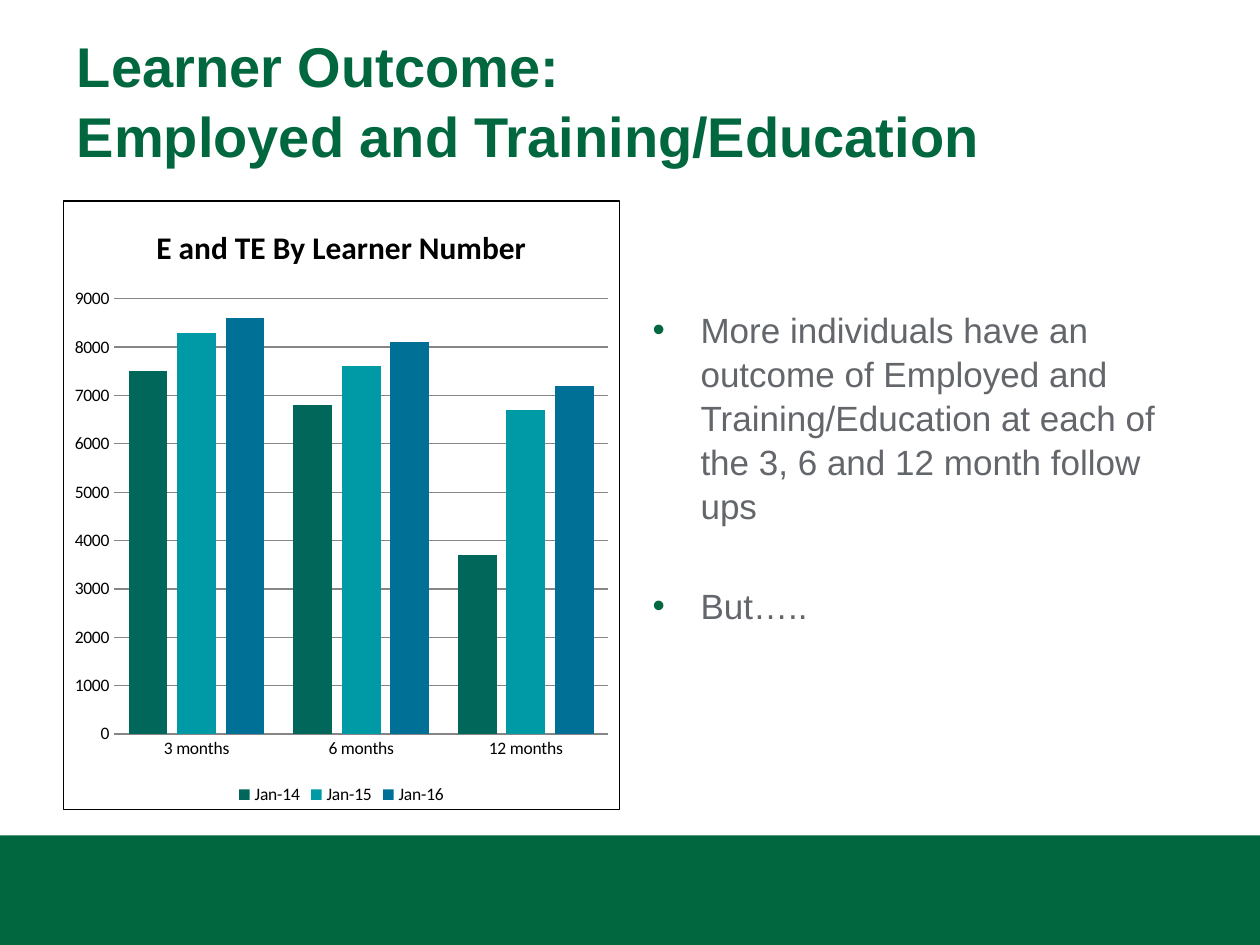
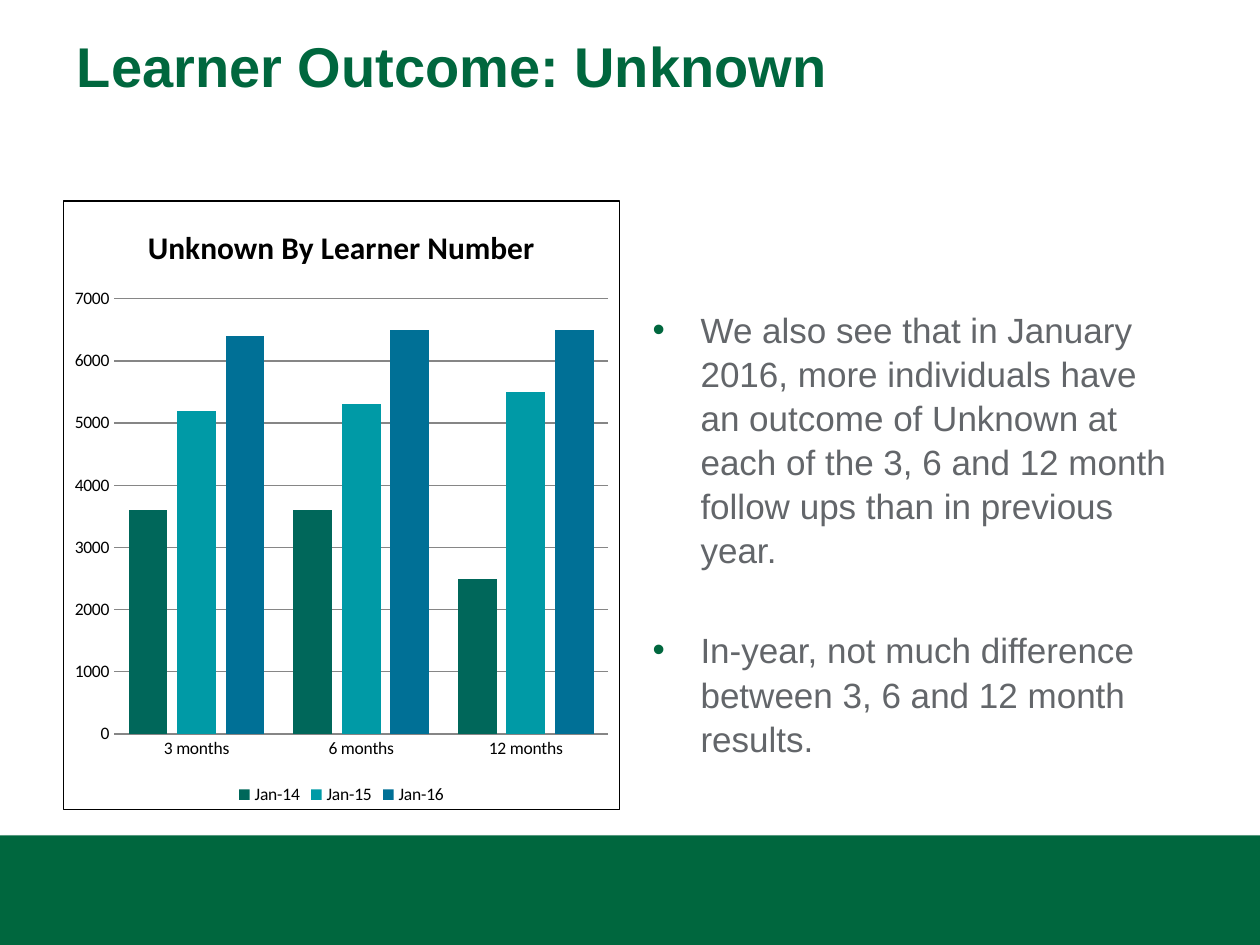
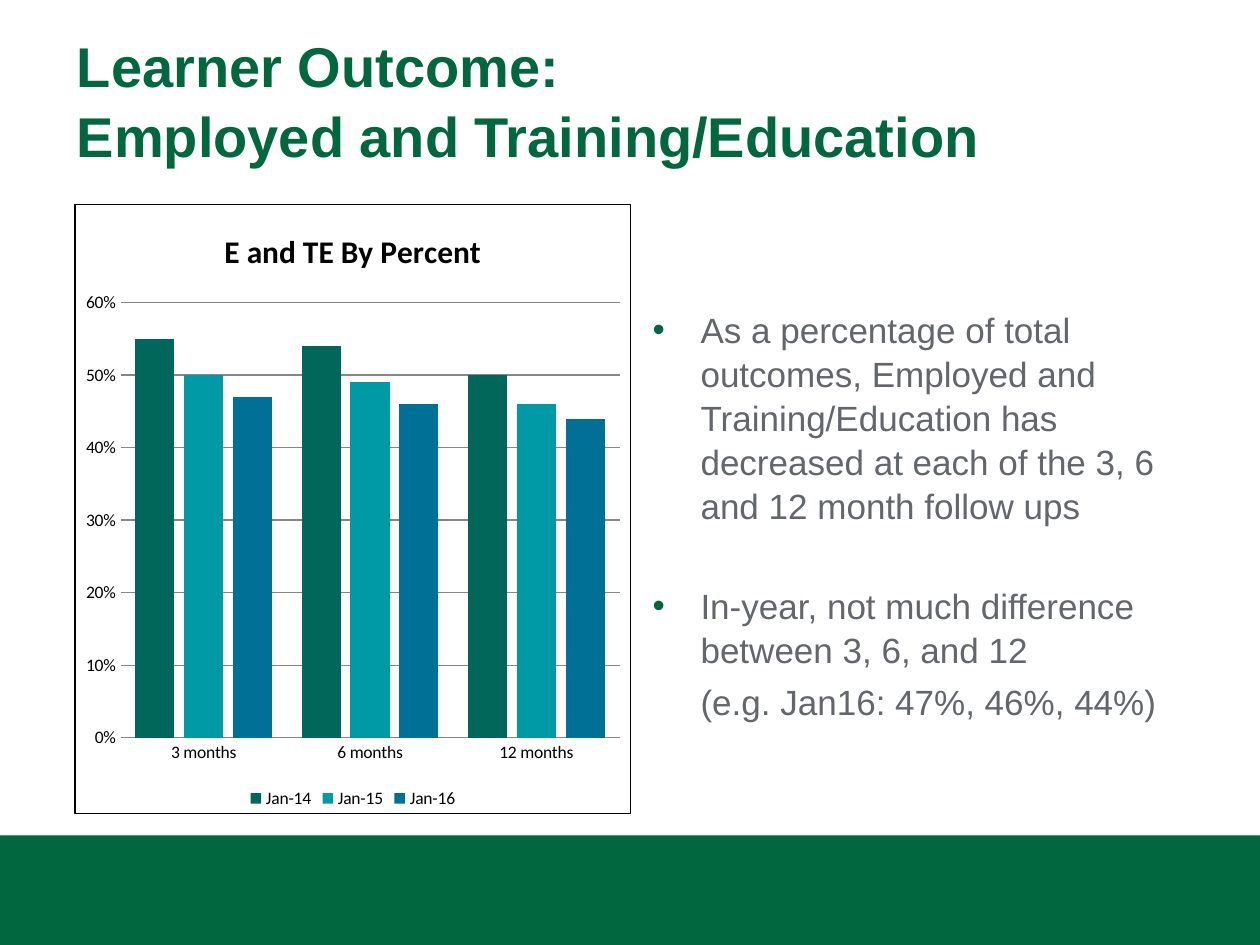
"""Build three slides on learner outcomes, each with a column chart and bullets."""
from lxml import etree
from pptx import Presentation
from pptx import util as u
from pptx.chart.data import CategoryChartData
from pptx.dml.color import RGBColor
from pptx.enum import chart as ch, shapes, text
from pptx.oxml import parse_xml
from pptx.oxml.ns import nsdecls, qn

COLORS = {"green": "00673E", "gray": "63666A", "black": "000000", "grid": "868686",
          "Jan-14": "00675A", "Jan-15": "009AA6", "Jan-16": "007096"}
TITLE_FONT = {"name": "Arial", "size": u.Pt(32), "bold": True}
BODY_FONT = {"name": "Arial", "size": u.Pt(20)}
CHART_FONT = {"name": "Calibri", "size": u.Pt(10)}
CHART_TITLE_FONT = {"name": "Calibri", "size": u.Pt(18), "bold": True}
FRAME = {"word_wrap": True, "auto_size": text.MSO_AUTO_SIZE.NONE,
         "vertical_anchor": text.MSO_ANCHOR.TOP}
TITLE_AREA = (0.51, 0.16, 8.98, 1.31)
BODY_AREA = (5.08, 1.59, 4.42, 4.84)
BAND_AREA = (0, 6.63, 10, 0.87)
CHART_SIZE = (4.42, 4.84)
CATEGORIES = ["3 months", "6 months", "12 months"]
EMPLOYED_TITLE = "Learner Outcome: \vEmployed and Training/Education"

SLIDES = [
    {"title": EMPLOYED_TITLE, "chart_title": "E and TE By Learner Number",
     "corner": (0.5, 1.59), "format": "0", "top": 9000, "step": 1000,
     "series": {"Jan-14": (7500, 6800, 3700), "Jan-15": (8300, 7600, 6700),
                "Jan-16": (8600, 8100, 7200)},
     "bullets": ["More individuals have an outcome of Employed and Training/Education "
                 "at each of the 3, 6 and 12 month follow ups", "But….."]},
    {"title": "Learner Outcome: Unknown", "chart_title": "Unknown By Learner Number",
     "corner": (0.5, 1.59), "format": "0", "top": 7000, "step": 1000,
     "series": {"Jan-14": (3600, 3600, 2500), "Jan-15": (5200, 5300, 5500),
                "Jan-16": (6400, 6500, 6500)},
     "bullets": ["We also see that in January 2016, more individuals have an outcome of "
                 "Unknown at each of the 3, 6 and 12 month follow ups than in previous year.",
                 "In-year, not much difference between 3, 6 and 12 month results."]},
    {"title": EMPLOYED_TITLE, "chart_title": "E and TE By Percent",
     "corner": (0.59, 1.62), "format": "0%", "top": 0.6, "step": 0.1,
     "series": {"Jan-14": (0.55, 0.54, 0.5), "Jan-15": (0.5, 0.49, 0.46),
                "Jan-16": (0.47, 0.46, 0.44)},
     "bullets": ["As a percentage of total outcomes, Employed and Training/Education has "
                 "decreased at each of the 3, 6 and 12 month follow ups",
                 "In-year, not much difference between 3, 6, and 12"],
     "example": "(e.g. Jan16: 47%, 46%, 44%)"},
]


def apply(target, values):
    """Set each named attribute on the target."""
    for name, value in values.items():
        setattr(target, name, value)


def color(name):
    """Return a named colour."""
    return RGBColor.from_string(COLORS[name])


def style_font(font, values, shade):
    """Format a font and colour it."""
    apply(font, values)
    font.color.rgb = color(shade)


def place(shape, area):
    """Move a shape to an area given in inches."""
    apply(shape, dict(zip(("left", "top", "width", "height"), map(u.Inches, area))))


def add_band(layout, page):
    """Draw the footer band and hand it to the layout that all slides share."""
    band = page.shapes.add_shape(shapes.MSO_SHAPE.RECTANGLE, *map(u.Inches, BAND_AREA))
    band.fill.solid()
    band.fill.fore_color.rgb = color("green")
    band.line.fill.background()
    band.element.spPr.append(parse_xml(
        f'<a:effectLst {nsdecls("a")}><a:outerShdw blurRad="{u.Pt(3.1)}" dist="{u.Pt(1.8)}" '
        f'dir="5400000" rotWithShape="0"><a:srgbClr val="{COLORS["black"]}">'
        '<a:alpha val="35000"/></a:srgbClr></a:outerShdw></a:effectLst>'))
    band.element.nvSpPr.cNvPr.set("id", "20")
    layout.shapes.element.insert(2, band.element)


def fill_title(box, words):
    """Write the slide title."""
    frame = box.text_frame
    apply(frame, FRAME)
    frame.margin_top = u.Inches(0.06)
    frame.text = words
    para = frame.paragraphs[0]
    apply(para, {"alignment": text.PP_ALIGN.LEFT, "line_spacing": 1.05})
    for span in para.runs:
        style_font(span.font, TITLE_FONT, "green")
    for line_break in box.element.iter(qn("a:br")):
        etree.SubElement(line_break, qn("a:rPr"), sz="3200")


def add_point(para, words, space, bullet=True):
    """Write one body paragraph, with or without a bullet."""
    props = para._p.get_or_add_pPr()
    props.set("marL", str(u.Inches(0.38)))
    props.set("indent", str(u.Inches(-0.38 if bullet else 0)))
    if bullet:
        shade = etree.SubElement(props, qn("a:buClr"))
        etree.SubElement(shade, qn("a:srgbClr"), val=COLORS["green"])
        etree.SubElement(props, qn("a:buFont"), typeface="Arial")
        etree.SubElement(props, qn("a:buChar"), char="•")
    else:
        etree.SubElement(props, qn("a:buNone"))
    apply(para, {"line_spacing": 1.05, "space_before": u.Pt(space)})
    span = para.add_run()
    span.text = words
    style_font(span.font, BODY_FONT, "gray")


def fill_body(box, bullets, example=None):
    """Write the bullets and the optional example below them."""
    frame = box.text_frame
    apply(frame, FRAME)
    frame.margin_top = u.Inches(0.84)
    for number, words in enumerate(bullets):
        para = frame.add_paragraph() if number else frame.paragraphs[0]
        add_point(para, words, 32 if number else 0)
    if example:
        add_point(frame.add_paragraph(), example, 4, bullet=False)


def style_line(line, shade):
    """Give a line its colour and the common width."""
    line.color.rgb = color(shade)
    line.width = u.Pt(0.75)


def style_axes(chart, content):
    """Format the category and value axes."""
    months, scale = chart.category_axis, chart.value_axis
    for axis in (months, scale):
        axis.major_tick_mark = axis.minor_tick_mark = ch.XL_TICK_MARK.NONE
    style_line(months.format.line, "grid")
    apply(scale, {"minimum_scale": 0, "maximum_scale": content["top"],
                  "major_unit": content["step"], "has_major_gridlines": True})
    style_line(scale.major_gridlines.format.line, "grid")
    scale.format.line.fill.background()
    apply(scale.tick_labels, {"number_format": content["format"],
                              "number_format_is_linked": False})


def add_outcome_chart(page, content):
    """Add the clustered columns with title, legend and border."""
    data = CategoryChartData(number_format=content["format"])
    data.categories = CATEGORIES
    for name, values in content["series"].items():
        data.add_series(name, values)
    area = map(u.Inches, content["corner"] + CHART_SIZE)
    chart = page.shapes.add_chart(ch.XL_CHART_TYPE.COLUMN_CLUSTERED, *area, data).chart
    style_font(chart.font, CHART_FONT, "black")
    chart.font._element.getparent().getparent().getparent().addprevious(parse_xml(
        f'<c:spPr {nsdecls("c", "a")}><a:ln w="{u.Pt(0.75)}"><a:solidFill>'
        f'<a:srgbClr val="{COLORS["black"]}"/></a:solidFill></a:ln></c:spPr>'))
    apply(chart, {"has_title": True, "has_legend": True})
    heading = chart.chart_title.text_frame
    heading.text = content["chart_title"]
    style_font(heading.paragraphs[0].runs[0].font, CHART_TITLE_FONT, "black")
    apply(chart.legend, {"position": ch.XL_LEGEND_POSITION.BOTTOM, "include_in_layout": False})
    style_axes(chart, content)
    plot = chart.plots[0]
    apply(plot, {"gap_width": 75, "overlap": -25, "vary_by_categories": False})
    for series in plot.series:
        series.format.fill.solid()
        series.format.fill.fore_color.rgb = color(series.name)


def main():
    """Build and save the deck."""
    deck = Presentation()
    apply(deck, {"slide_width": u.Inches(10), "slide_height": u.Inches(7.5)})
    layout = deck.slide_layouts[1]
    for holder, area in zip(layout.placeholders, (TITLE_AREA, BODY_AREA)):
        place(holder, area)
    for content in SLIDES:
        page = deck.slides.add_slide(layout)
        fill_title(page.shapes.title, content["title"])
        add_outcome_chart(page, content)
        fill_body(page.placeholders[1], content["bullets"], content.get("example"))
    add_band(layout, deck.slides[0])
    deck.save("out.pptx")


if __name__ == "__main__":
    main()
